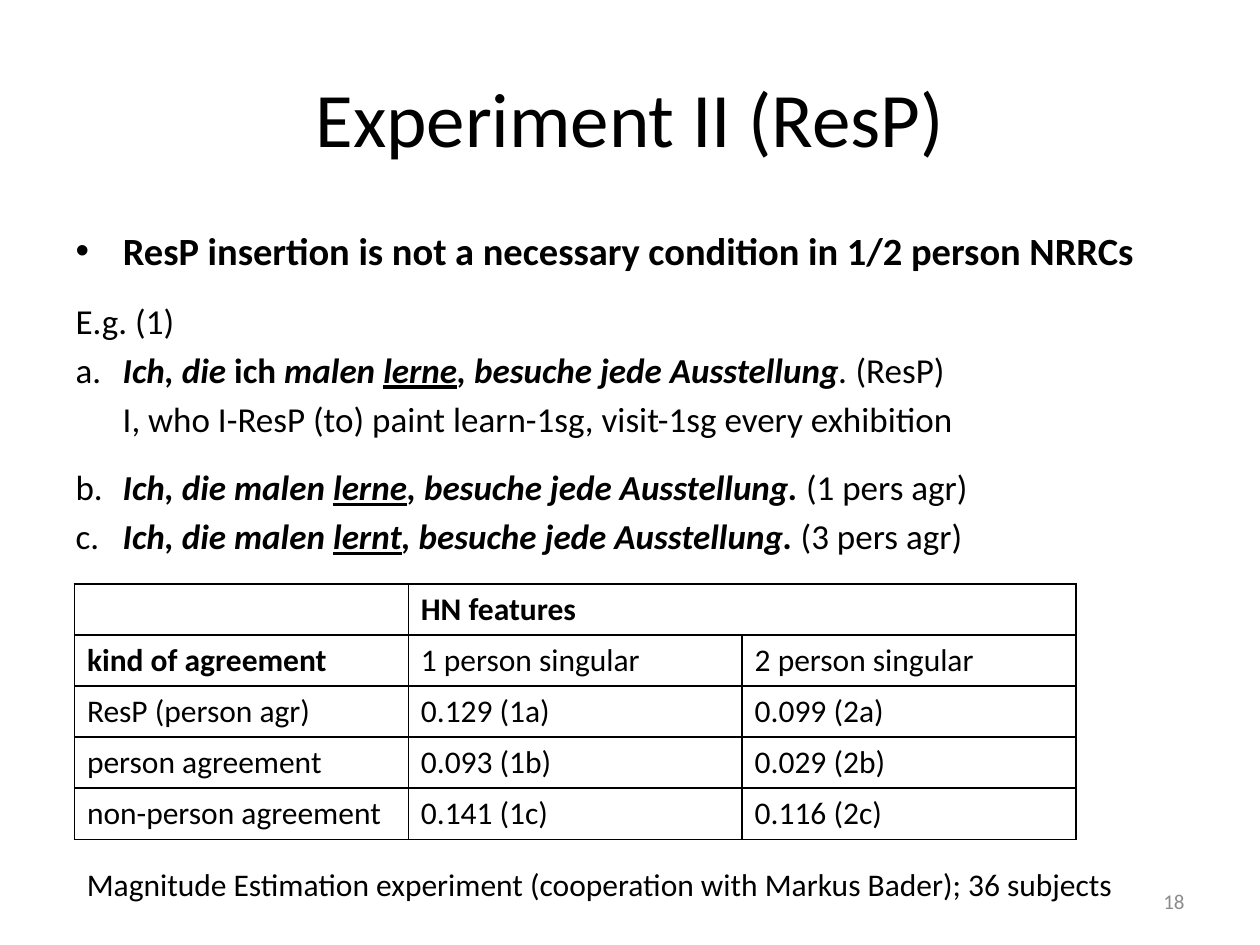
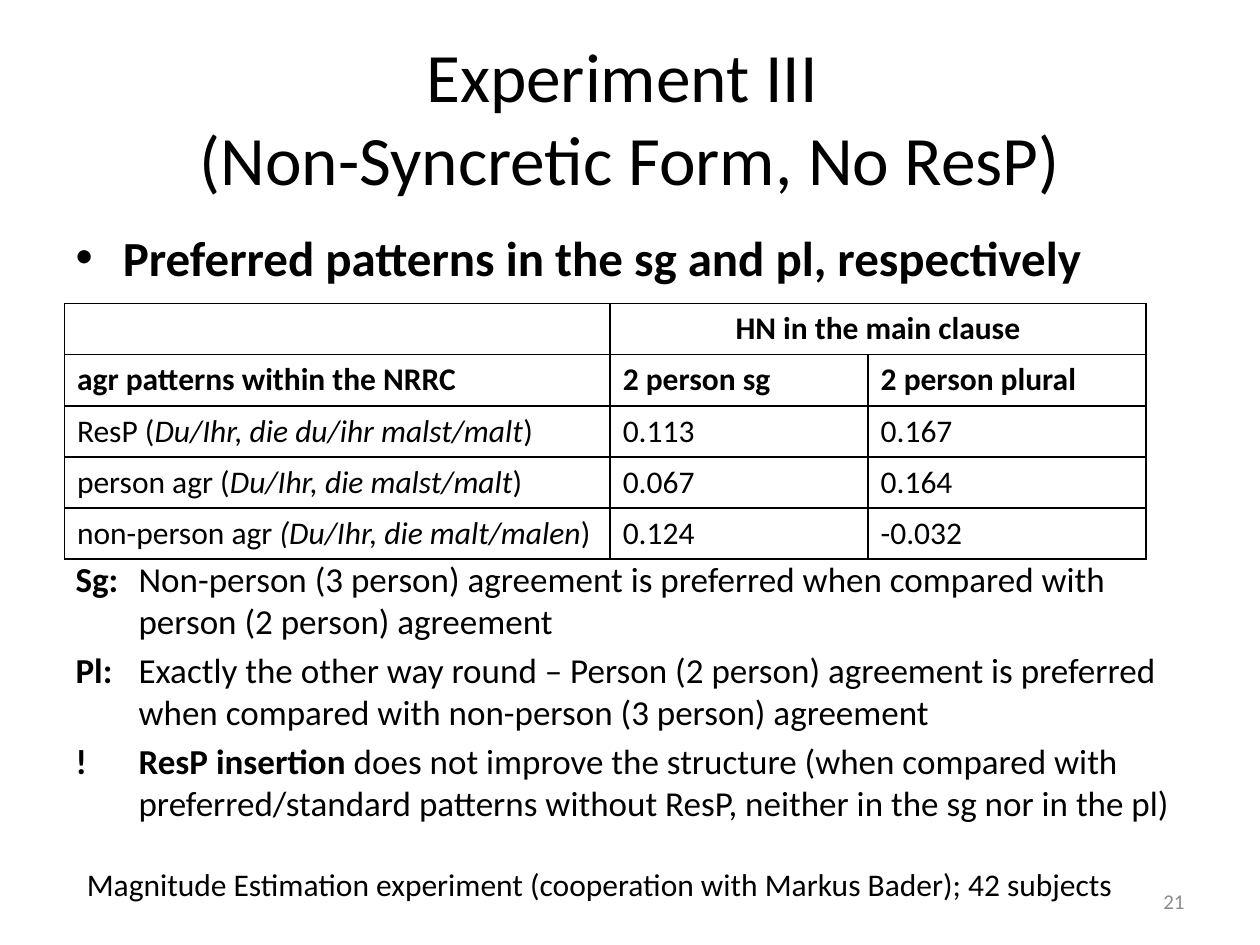
from dataclasses import dataclass

from lxml.etree import SubElement
from pptx import Presentation
from pptx.dml.color import RGBColor
from pptx.enum.text import MSO_ANCHOR, MSO_AUTO_SIZE, PP_ALIGN
from pptx.oxml.ns import qn
from pptx.util import Cm, Pt


@dataclass(frozen=True)
class Theme:
    font: str = "Calibri"
    ink: RGBColor = RGBColor(0x00, 0x00, 0x00)
    muted: RGBColor = RGBColor(0x8C, 0x8C, 0x8C)
    title: float = 44
    two_line_title: float = 39.6
    claim: float = 22
    large_claim: float = 28
    body: float = 20
    table: float = 18
    number: float = 12
    border: float = 1


THEME = Theme()
MARGIN = Cm(1.27)
CONTENT_WIDTH = Cm(22.86)
ROW_HEIGHT = Cm(1.03)
EXAMPLE_INDENT = Cm(0.95)
FINDING_INDENT = Cm(1.27)
LINE_GAP = 4
GROUP_GAP = 15
TABLE_GAP = 155


def write(paragraph, pieces, size=THEME.body, color=THEME.ink, align=None):
    """Fill a paragraph with a string or (text, style) pairs; style mixes b, i and u."""
    if isinstance(pieces, str):
        pieces = [(pieces, "")]
    if align is not None:
        paragraph.alignment = align
    for text, style in pieces:
        run = paragraph.add_run()
        run.text = text
        font = run.font
        font.name, font.size = THEME.font, Pt(size)
        font.color.rgb = color
        font.bold, font.italic = "b" in style, "i" in style
        font.underline = "u" in style


def place(shape, left, top, width, height):
    shape.left, shape.top, shape.width, shape.height = left, top, width, height


def add_title(slide, lines, size):
    title = slide.shapes.title
    place(title, MARGIN, Cm(0.76), CONTENT_WIDTH, Cm(3.18))
    frame = title.text_frame
    frame.auto_size = MSO_AUTO_SIZE.NONE
    frame.vertical_anchor = MSO_ANCHOR.MIDDLE
    heading = frame.paragraphs[0]
    for position, line in enumerate(lines):
        if position:
            heading.add_line_break()
        write(heading, line, size=size, align=PP_ALIGN.CENTER)


def add_claim(slide, claim, size):
    """Put the bulleted claim first in the body and return the body's text frame."""
    body = slide.placeholders[1]
    place(body, MARGIN, Cm(4.45), CONTENT_WIDTH, Cm(12.57))
    body.text_frame.auto_size = MSO_AUTO_SIZE.NONE
    write(body.text_frame.paragraphs[0], [(claim, "b")], size=size)
    return body.text_frame


def add_body_line(frame, pieces, indent, gap=LINE_GAP, hanging=True):
    """Add a line without bullet; a hanging line starts with a label and a tab."""
    line = frame.add_paragraph()
    line.space_before = Pt(gap)
    properties = line._p.get_or_add_pPr()
    properties.set("marL", str(indent))
    properties.set("indent", str(-indent if hanging else 0))
    SubElement(properties, qn("a:buNone"))
    write(line, pieces)


def add_textbox(slide, text, left, top, width, height, anchor=MSO_ANCHOR.TOP, **text_format):
    frame = slide.shapes.add_textbox(left, top, width, height).text_frame
    frame.word_wrap = True
    frame.vertical_anchor = anchor
    write(frame.paragraphs[0], text, **text_format)


def add_footer(slide, subjects, number):
    add_textbox(
        slide,
        f"Magnitude Estimation experiment (cooperation with Markus Bader); {subjects} subjects",
        Cm(1.5), Cm(17.32), Cm(21.79), Cm(1.02), size=THEME.table,
    )
    add_textbox(
        slide, number, Cm(18.21), Cm(17.65), Cm(5.92), Cm(1.02),
        anchor=MSO_ANCHOR.MIDDLE, size=THEME.number, color=THEME.muted, align=PP_ALIGN.RIGHT,
    )


def outline_cell(cell):
    properties = cell._tc.get_or_add_tcPr()
    for side in ("lnL", "lnR", "lnT", "lnB"):
        line = SubElement(properties, qn(f"a:{side}"), w=str(Pt(THEME.border)))
        fill = SubElement(line, qn("a:solidFill"))
        SubElement(fill, qn("a:srgbClr"), val=str(THEME.ink))
    cell.fill.background()


def add_results(slide, left, top, widths, features, rows, features_align=None):
    """Add a table whose top row is an empty cell and a heading over the value columns."""
    rows = [["", [(features, "b")], ""], *rows]
    table = slide.shapes.add_table(
        len(rows), len(widths), left, top, sum(widths), ROW_HEIGHT * len(rows)
    ).table
    table.first_row = table.horz_banding = False
    for column, width in zip(table.columns, widths):
        column.width = width
    for row_index, row in enumerate(rows):
        table.rows[row_index].height = ROW_HEIGHT
        for column_index, pieces in enumerate(row):
            cell = table.cell(row_index, column_index)
            outline_cell(cell)
            if pieces:
                write(cell.text_frame.paragraphs[0], pieces, size=THEME.table,
                      align=features_align if row_index == 0 else None)
    table.cell(0, 1).merge(table.cell(0, len(widths) - 1))


def example(label, verb, ending, note):
    return [(f"{label}\t", ""), ("Ich, die malen ", "bi"), (verb, "biu"),
            (f", besuche jede Ausstellung.{ending}", "bi"), (note, "")]


def pattern(kind, clause):
    return [(kind, ""), (clause, "i"), (")", "")]


def build_resp_slide(slide):
    add_title(slide, ["Experiment II (ResP)"], THEME.title)
    body = add_claim(
        slide, "ResP insertion is not a necessary condition in 1/2 person NRRCs", THEME.claim)
    resp_example = [
        ("a.\t", ""), ("Ich, die ", "bi"), ("ich", "b"), (" malen ", "bi"), ("lerne", "biu"),
        (", besuche jede Ausstellung", "bi"), (".", "i"), (" (ResP)", ""),
    ]
    add_body_line(body, "E.g. (1)", EXAMPLE_INDENT, gap=GROUP_GAP)
    add_body_line(body, resp_example, EXAMPLE_INDENT)
    add_body_line(body, "I, who I-ResP (to) paint learn-1sg, visit-1sg every exhibition",
                  EXAMPLE_INDENT, hanging=False)
    add_body_line(body, example("b.", "lerne", " ", "(1 pers agr)"),
                  EXAMPLE_INDENT, gap=GROUP_GAP)
    add_body_line(body, example("c.", "lernt", "", " (3 pers agr)"), EXAMPLE_INDENT)
    add_results(
        slide, Cm(1.5), Cm(11.77), [Cm(6.73)] * 3, "HN features",
        [
            [[("kind of agreement", "b")], "1 person singular", "2 person singular"],
            ["ResP (person agr)", "0.129 (1a)", "0.099 (2a)"],
            ["person agreement", "0.093 (1b)", "0.029 (2b)"],
            ["non-person agreement", "0.141 (1c)", "0.116 (2c)"],
        ],
    )
    add_footer(slide, 36, "18")


def build_non_syncretic_slide(slide):
    add_title(slide, ["Experiment III ", "(Non-Syncretic Form, No ResP)"], THEME.two_line_title)
    body = add_claim(
        slide, "Preferred patterns in the sg and pl, respectively", THEME.large_claim)
    findings = [
        ("Sg:\t", "Non-person (3 person) agreement is preferred when compared with "
                  "person (2 person) agreement"),
        ("Pl:\t", "Exactly the other way round – Person (2 person) agreement is preferred "
                  "when compared with non-person (3 person) agreement"),
        ("!\tResP insertion ", "does not improve the structure (when compared with "
                               "preferred/standard patterns without ResP, "
                               "neither in the sg nor in the pl)"),
    ]
    for position, (lead, finding) in enumerate(findings):
        add_body_line(body, [(lead, "b"), (finding, "")], FINDING_INDENT,
                      gap=LINE_GAP if position else TABLE_GAP)
    headings = ["agr patterns within the NRRC", "2 person sg", "2 person plural"]
    add_results(
        slide, Cm(1.3), Cm(6.12), [Cm(11), Cm(5.2), Cm(5.6)], "HN in the main clause",
        [
            [[(heading, "b")] for heading in headings],
            [pattern("ResP (", "Du/Ihr, die du/ihr malst/malt"), "0.113", "0.167"],
            [pattern("person agr (", "Du/Ihr, die malst/malt"), "0.067", "0.164"],
            [pattern("non-person agr ", "(Du/Ihr, die malt/malen"), "0.124", "-0.032"],
        ],
        features_align=PP_ALIGN.CENTER,
    )
    add_footer(slide, 42, "21")


def main():
    deck = Presentation()
    deck.slide_width, deck.slide_height = Cm(25.4), Cm(19.05)
    title_and_content = deck.slide_layouts[1]
    for build in (build_resp_slide, build_non_syncretic_slide):
        build(deck.slides.add_slide(title_and_content))
    deck.save("out.pptx")


if __name__ == "__main__":
    main()
